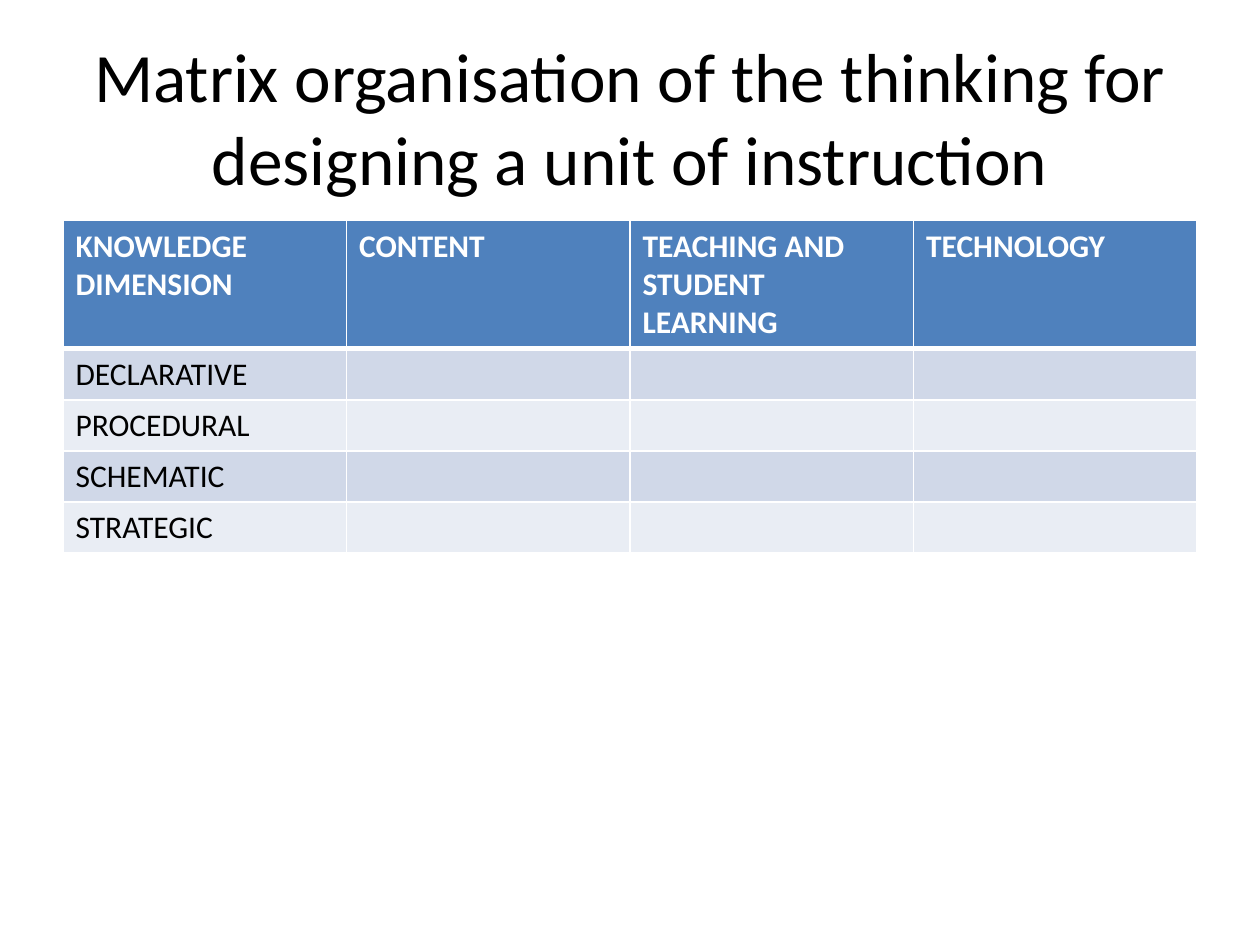
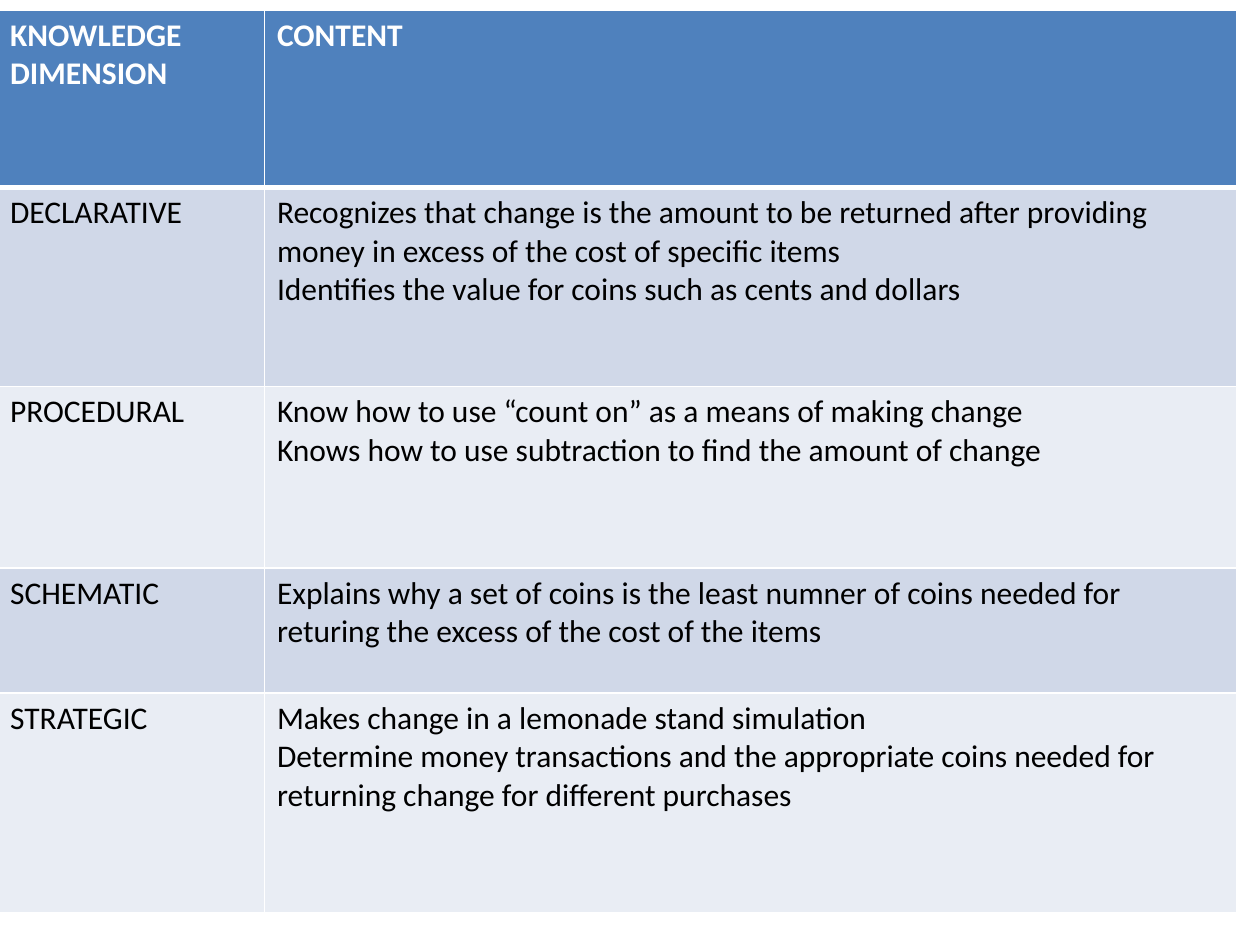
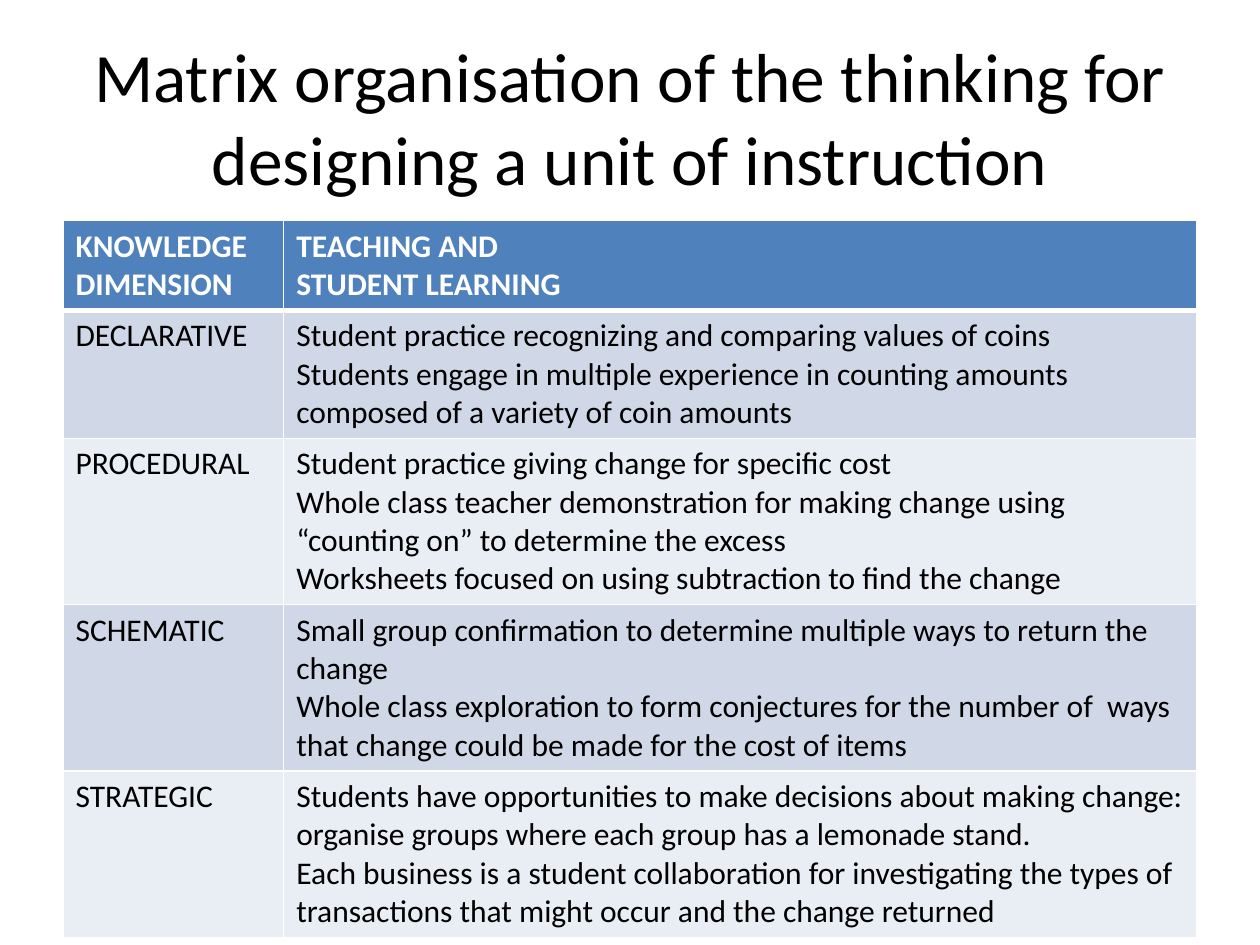
from dataclasses import dataclass
from typing import NamedTuple

from lxml.etree import SubElement
from pptx import Presentation
from pptx.dml.color import RGBColor as RGB
from pptx.enum.text import MSO_ANCHOR as Anchor, MSO_AUTO_SIZE as AutoSize, PP_ALIGN as Align
from pptx.oxml.ns import qn
from pptx.util import Cm, Pt


@dataclass(frozen=True)
class Theme:
    font: str = "Calibri"
    title_size: float = 39.6
    cell_size: float = 18
    ink: str = "000000"
    paper: str = "FFFFFF"
    header: str = "4F81BD"
    bands: tuple = ("D0D8E8", "E9EDF4")
    rule: float = 1
    header_rule: float = 3


class Box(NamedTuple):
    left: float
    top: float
    width: float
    height: float


THEME = Theme()
TITLE_ONLY, BLANK = 5, 6
TITLE = "Matrix organisation of the thinking for designing a unit of instruction"
TITLE_BOX = Box(1.27, 0.76, 22.86, 3.18)
DIMENSION = ["KNOWLEDGE", "DIMENSION"]
LEARNING = ["TEACHING AND", "STUDENT LEARNING"]
KINDS = ["DECLARATIVE", "PROCEDURAL", "SCHEMATIC", "STRATEGIC"]
LINE_ROWS = [1.03] * (len(KINDS) + 1)

CONTENT = [
    ["Recognizes that change is the amount to be returned after providing money in excess "
     "of the cost of specific items",
     "Identifies the value for coins such as cents and dollars"],
    ["Know how to use “count on” as a means of making change",
     "Knows how to use subtraction to find the amount of change"],
    ["Explains why a set of coins is the least numner of coins needed for returing the excess "
     "of the cost of the items"],
    ["Makes change in a lemonade stand simulation",
     "Determine money transactions and the appropriate coins needed for returning change "
     "for different purchases"],
]

ACTIVITIES = [
    ["Student practice recognizing and comparing values of coins",
     "Students engage in multiple experience in counting amounts composed of a variety "
     "of coin amounts"],
    ["Student practice giving change for specific cost",
     "Whole class teacher demonstration for making change using “counting on” to determine "
     "the excess",
     "Worksheets focused on using subtraction to find the change"],
    ["Small group confirmation to determine multiple ways to return the change",
     "Whole class exploration to form conjectures for the number of  ways that change could "
     "be made for the cost of items"],
    ["Students have opportunities to make decisions about making change: organise groups "
     "where each group has a lemonade stand.",
     "Each business is a student collaboration for investigating the types of transactions "
     "that might occur and the change returned"],
]


def add_run(p, text, size, color, bold=False):
    r = p.add_run()
    r.text = text
    r.font.name = THEME.font
    r.font.size = Pt(size)
    r.font.bold = bold
    r.font.color.rgb = RGB.from_string(color)


def add_title(s, text, box):
    sp = s.shapes.title
    sp.left, sp.top, sp.width, sp.height = map(Cm, box)
    tf = sp.text_frame
    tf.word_wrap = True
    tf.auto_size = AutoSize.NONE
    tf.vertical_anchor = Anchor.MIDDLE
    p = tf.paragraphs[0]
    p.alignment = Align.CENTER
    add_run(p, text, THEME.title_size, THEME.ink)


def set_borders(cell, top, bottom):
    tc_pr = cell._tc.get_or_add_tcPr()
    widths = {"lnL": THEME.rule, "lnR": THEME.rule, "lnT": top, "lnB": bottom}
    for tag, width in widths.items():
        ln = SubElement(tc_pr, qn(f"a:{tag}"), w=str(Pt(width)))
        fill = SubElement(ln, qn("a:solidFill"))
        SubElement(fill, qn("a:srgbClr"), val=THEME.paper)


def fill_cell(cell, lines, row):
    is_header = row == 0
    set_borders(cell,
                THEME.header_rule if row == 1 else THEME.rule,
                THEME.header_rule if is_header else THEME.rule)
    cell.fill.solid()
    band = THEME.header if is_header else THEME.bands[(row - 1) % 2]
    cell.fill.fore_color.rgb = RGB.from_string(band)
    tf = cell.text_frame
    for i, line in enumerate(lines):
        p = tf.add_paragraph() if i else tf.paragraphs[0]
        add_run(p, line, THEME.cell_size, THEME.paper if is_header else THEME.ink, is_header)


def add_matrix(s, box, widths, heights, headings, answers):
    rows = [[DIMENSION, *headings]]
    rows += [[[kind], *cells] for kind, cells in zip(KINDS, answers)]
    frame = s.shapes.add_table(len(rows), len(widths), *map(Cm, box))
    table = frame.table
    for column, width in zip(table.columns, widths):
        column.width = Cm(width)
    for i, (row, height) in enumerate(zip(rows, heights)):
        table.rows[i].height = Cm(height)
        for j, lines in enumerate(row):
            fill_cell(table.cell(i, j), lines, i)
    frame.height = Cm(box.height)


def titled_slide(prs, box, widths, headings, answers):
    s = prs.slides.add_slide(prs.slide_layouts[TITLE_ONLY])
    add_title(s, TITLE, TITLE_BOX)
    add_matrix(s, box, widths, LINE_ROWS, headings, answers)


def full_slide(prs, box, widths, heights, headings, answers):
    s = prs.slides.add_slide(prs.slide_layouts[BLANK])
    add_matrix(s, box, widths, heights, headings, answers)


def main():
    prs = Presentation()
    prs.slide_width, prs.slide_height = Cm(25.4), Cm(19.05)
    titled_slide(prs, Box(1.27, 4.45, 22.86, 9.65), [22.86 / 4] * 4,
                 [["CONTENT"], LEARNING, ["TECHNOLOGY"]], [[[]] * 3] * len(KINDS))
    full_slide(prs, Box(-0.05, 0.2, 24.99, 18.21), [5.38, 19.61],
               [3.58, 4.01, 3.66, 2.52, 4.42],
               [["CONTENT"]], [[lines] for lines in CONTENT])
    titled_slide(prs, Box(1.27, 4.45, 22.86, 14.22), [4.45, 18.41],
                 [LEARNING], [[lines] for lines in ACTIVITIES])
    prs.save("out.pptx")


if __name__ == "__main__":
    main()
